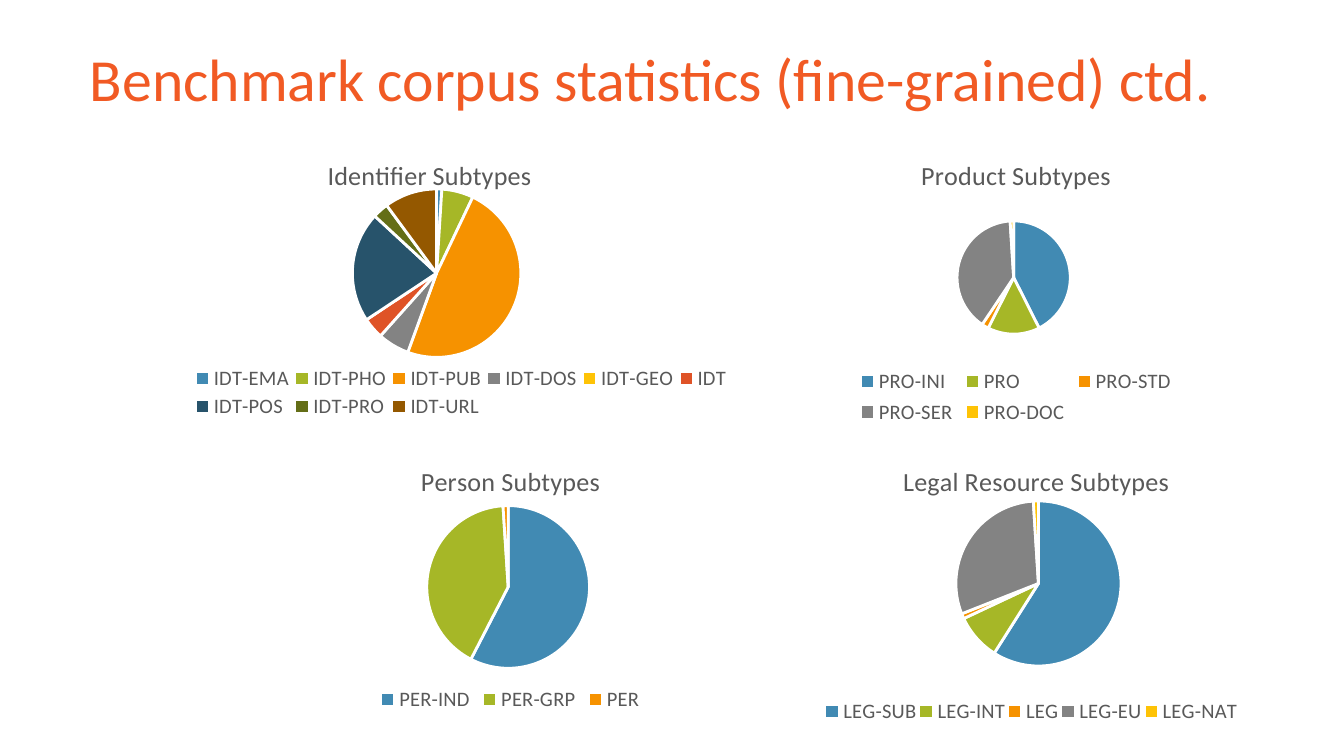
from typing import NamedTuple, Optional

import pptx
import pptx.chart.data
import pptx.dml.color
import pptx.enum.chart
import pptx.enum.text
import pptx.oxml
import pptx.oxml.ns
import pptx.util

Cm = pptx.util.Cm
Pt = pptx.util.Pt

COLORS = {
    "heading": "F15A24",
    "label": "595959",
    "border": "FFFFFF",
    "blue": "418AB3",
    "green": "A6B727",
    "orange": "F69200",
    "gray": "838383",
    "yellow": "FEC306",
    "red": "DF5327",
    "navy": "27536B",
    "olive": "646E17",
    "brown": "945800",
}
SLICE_COLORS = ("blue", "green", "orange", "gray", "yellow",
                "red", "navy", "olive", "brown")
HEADING_FORMAT = {"name": "Calibri", "size": Pt(32), "bold": False}
CHART_TITLE_FORMAT = {"name": "Calibri", "size": Pt(14), "bold": False}
LEGEND_FORMAT = {"name": "Calibri", "size": Pt(11), "bold": False}


class Box(NamedTuple):
    x: float
    y: float
    w: float
    h: float


class SubtypePie(NamedTuple):
    title: str
    series: str
    place: Box
    shares: dict[str, int]
    plot: Box
    legend: Optional[Box] = None


PIES = (
    SubtypePie(
        "Identifier Subtypes", "Identifier Subtypes",
        Box(1.45, 2.64, 13.34, 5.49),
        {"IDT-EMA": 1, "IDT-PHO": 6, "IDT-PUB": 48, "IDT-DOS": 6, "IDT-GEO": 0,
         "IDT": 4, "IDT-POS": 21, "IDT-PRO": 3, "IDT-URL": 10},
        Box(0.39, 0.17, 0.24, 0.58), Box(0.16, 0.77, 0.77, 0.2)),
    SubtypePie(
        "Person Subtypes", "Series 1",
        Box(5.23, 8.43, 8.84, 5.13),
        {"PER-IND": 57, "PER-GRP": 41, "PER": 1},
        Box(0.32, 0.22, 0.35, 0.6)),
    SubtypePie(
        "Product Subtypes", "Product Subtypes",
        Box(14.53, 2.64, 9.35, 5.49),
        {"PRO-INI": 43, "PRO": 15, "PRO-STD": 2, "PRO-SER": 40, "PRO-DOC": 1},
        Box(0.38, 0.28, 0.23, 0.39)),
    SubtypePie(
        "Legal Resource Subtypes", "Legal Resource Subtypes",
        Box(15.29, 8.41, 8.59, 5.89),
        {"LEG-SUB": 59, "LEG-INT": 9, "LEG": 1, "LEG-EU": 30, "LEG-NAT": 1},
        Box(0.32, 0.18, 0.37, 0.53), Box(0.03, 0.8, 0.92, 0.11)),
)


def rgb(name: str) -> pptx.dml.color.RGBColor:
    return pptx.dml.color.RGBColor.from_string(COLORS[name])


def style_font(font, values: dict, color: str) -> None:
    for attribute, value in values.items():
        setattr(font, attribute, value)
    font.color.rgb = rgb(color)


def set_layout(parent, index: int, box: Box, inner: bool = False) -> None:
    for old in parent.findall(pptx.oxml.ns.qn("c:layout")):
        parent.remove(old)
    target = '<c:layoutTarget val="inner"/>' if inner else ""
    modes = '<c:xMode val="edge"/><c:yMode val="edge"/>'
    sizes = "".join(f'<c:{key} val="{value}"/>'
                    for key, value in box._asdict().items())
    parent.insert(index, pptx.oxml.parse_xml(
        f'<c:layout {pptx.oxml.ns.nsdecls("c")}><c:manualLayout>'
        f"{target}{modes}{sizes}</c:manualLayout></c:layout>"))


def add_heading(slide, text: str, place: Box) -> None:
    heading = slide.shapes.add_textbox(*map(Cm, place))
    frame = heading.text_frame
    frame.word_wrap = True
    frame.vertical_anchor = pptx.enum.text.MSO_ANCHOR.MIDDLE
    paragraph = frame.paragraphs[0]
    paragraph.line_spacing = 0.9
    run = paragraph.add_run()
    run.text = text
    style_font(run.font, HEADING_FORMAT, "heading")


def add_pie(slide, pie: SubtypePie) -> None:
    data = pptx.chart.data.CategoryChartData()
    data.categories = list(pie.shares)
    data.add_series(pie.series, list(pie.shares.values()))
    chart = slide.shapes.add_chart(
        pptx.enum.chart.XL_CHART_TYPE.PIE, *map(Cm, pie.place), data).chart
    chart.font.name = "Calibri"
    chart.font.size = Pt(10)

    chart.has_title = True
    title = chart.chart_title.text_frame.paragraphs[0].add_run()
    title.text = pie.title
    style_font(title.font, CHART_TITLE_FORMAT, "label")

    chart.has_legend = True
    legend = chart.legend
    legend.position = pptx.enum.chart.XL_LEGEND_POSITION.BOTTOM
    legend.include_in_layout = False
    style_font(legend.font, LEGEND_FORMAT, "label")

    plot = chart.plots[0]
    plot.vary_by_categories = True
    for index, color in zip(range(len(pie.shares)), SLICE_COLORS):
        piece = plot.series[0].points[index].format
        piece.fill.solid()
        piece.fill.fore_color.rgb = rgb(color)
        piece.line.color.rgb = rgb("border")
        piece.line.width = Pt(1.5)

    chart_xml = chart.element.find(pptx.oxml.ns.qn("c:chart"))
    set_layout(chart_xml.find(pptx.oxml.ns.qn("c:plotArea")), 0, pie.plot, True)
    if pie.legend:
        set_layout(chart_xml.find(pptx.oxml.ns.qn("c:legend")), 1, pie.legend)


def main() -> None:
    presentation = pptx.Presentation()
    presentation.slide_width = Cm(25.4)
    presentation.slide_height = Cm(14.29)
    slide = presentation.slides.add_slide(presentation.slide_layouts[6])
    add_heading(slide, "Benchmark corpus statistics (fine-grained) ctd.",
                Box(1.45, 0.76, 21.89, 1.6))
    for pie in PIES:
        add_pie(slide, pie)
    presentation.save("out.pptx")


if __name__ == "__main__":
    main()
